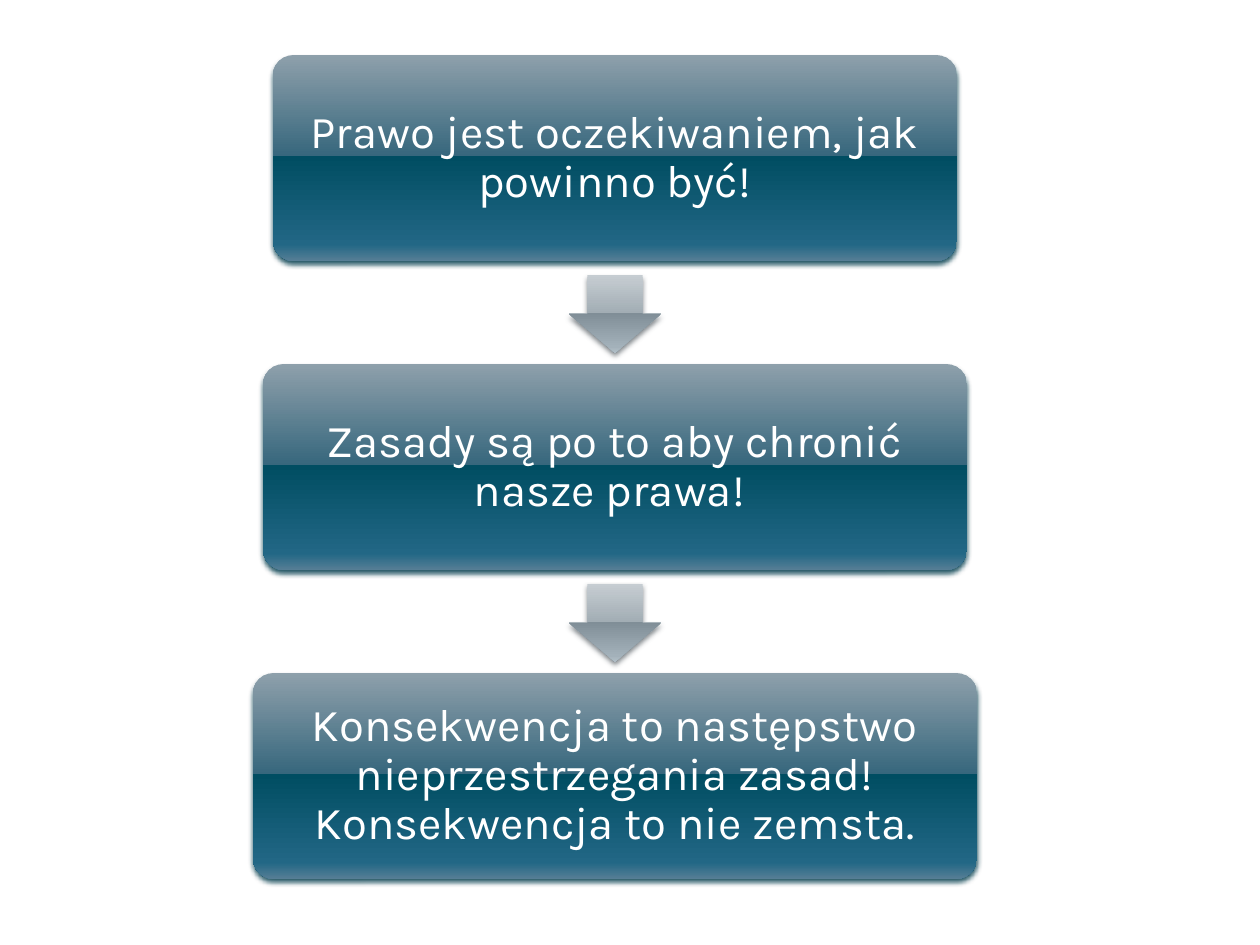
from lxml import etree
from pptx import Presentation
from pptx.dml.color import RGBColor
from pptx.enum.shapes import MSO_SHAPE
from pptx.enum.text import MSO_ANCHOR, PP_ALIGN
from pptx.oxml.ns import qn
from pptx.util import Pt

ROUNDED = MSO_SHAPE.ROUNDED_RECTANGLE
DOWN_ARROW = MSO_SHAPE.DOWN_ARROW
MIDDLE = MSO_ANCHOR.MIDDLE
CENTER = PP_ALIGN.CENTER

PX = 914400 // 126
WHITE = RGBColor(0xFF, 0xFF, 0xFF)
BOX_SHADOW = RGBColor(0x02, 0x3C, 0x4C)
ARROW_SHADOW = RGBColor(0x6A, 0x71, 0x76)
STOPS = (0, 49, 49, 92, 100)
BOX_COLOURS = (
    RGBColor(0x8E, 0xA0, 0xAB), RGBColor(0x37, 0x67, 0x7D),
    RGBColor(0x00, 0x4D, 0x62), RGBColor(0x22, 0x67, 0x85),
    RGBColor(0x56, 0x7E, 0x95),
)
ARROW_COLOURS = (
    RGBColor(0xC6, 0xCD, 0xD2), RGBColor(0xA2, 0xAD, 0xB4),
    RGBColor(0x80, 0x8E, 0x97), RGBColor(0xA3, 0xB1, 0xBA),
    RGBColor(0xB1, 0xBE, 0xC6),
)

STATEMENTS = (
    "Prawo jest oczekiwaniem, jak powinno być!",
    "Zasady są po to aby chronić nasze prawa! ",
    "Konsekwencja to następstwo nieprzestrzegania zasad! Konsekwencja to nie zemsta.",
)
AXIS = 615
FIRST_TOP, PITCH = 55, 309
BOX_WIDTH, BOX_GROWTH, BOX_HEIGHT = 684, 20, 206
ARROW_WIDTH, ARROW_HEIGHT, ARROW_OFFSET = 92, 78, 220


class FlowSlide:
    font = "Karla"
    size = Pt(26)
    inset = 8 * PX

    def __init__(self, deck):
        self.page = deck.slides.add_slide(deck.slide_layouts[6])

    def glossy(self, kind, top, width, height, colours, shadow_colour):
        left = AXIS - width // 2
        shape = self.page.shapes.add_shape(
            kind, left * PX, top * PX, width * PX, height * PX)
        shape.fill.gradient()
        shape.fill.gradient_angle = 270
        stops = shape._element.spPr.find(".//" + qn("a:gsLst"))
        for old in list(stops):
            stops.remove(old)
        for position, colour in zip(STOPS, colours):
            stop = etree.SubElement(stops, qn("a:gs"), pos=str(position * 1000))
            etree.SubElement(stop, qn("a:srgbClr"), val=str(colour))
        shape.line.fill.background()
        self.cast_shadow(shape, shadow_colour)
        return shape

    def cast_shadow(self, shape, colour):
        shape.shadow.inherit = False
        effects = shape._element.spPr.find(qn("a:effectLst"))
        shadow = etree.SubElement(
            effects, qn("a:outerShdw"), blurRad=str(Pt(3.1)), dist=str(Pt(2)),
            dir="5400000", algn="ctr", rotWithShape="0")
        tint = etree.SubElement(shadow, qn("a:srgbClr"), val=str(colour))
        etree.SubElement(tint, qn("a:alpha"), val="83000")

    def statement(self, text, top, width):
        box = self.glossy(ROUNDED, top, width, BOX_HEIGHT, BOX_COLOURS, BOX_SHADOW)
        box.adjustments[0] = 0.1
        frame = box.text_frame
        frame.word_wrap = True
        frame.vertical_anchor = MIDDLE
        frame.margin_left = frame.margin_right = self.inset
        frame.margin_top = frame.margin_bottom = self.inset
        para = frame.paragraphs[0]
        para.alignment = CENTER
        para.line_spacing = 0.9
        span = para.add_run()
        span.text = text
        span.font.name = self.font
        span.font.size = self.size
        span.font.color.rgb = WHITE

    def arrow(self, top):
        arrow = self.glossy(
            DOWN_ARROW, top, ARROW_WIDTH, ARROW_HEIGHT, ARROW_COLOURS, ARROW_SHADOW)
        arrow.adjustments[0] = 0.6
        arrow.adjustments[1] = 0.5


def main():
    deck = Presentation()
    deck.slide_width = 1260 * PX
    deck.slide_height = 945 * PX
    flow = FlowSlide(deck)
    for index, text in enumerate(STATEMENTS):
        top = FIRST_TOP + index * PITCH
        flow.statement(text, top, BOX_WIDTH + index * BOX_GROWTH)
        if index < len(STATEMENTS) - 1:
            flow.arrow(top + ARROW_OFFSET)
    deck.save("out.pptx")


if __name__ == "__main__":
    main()
